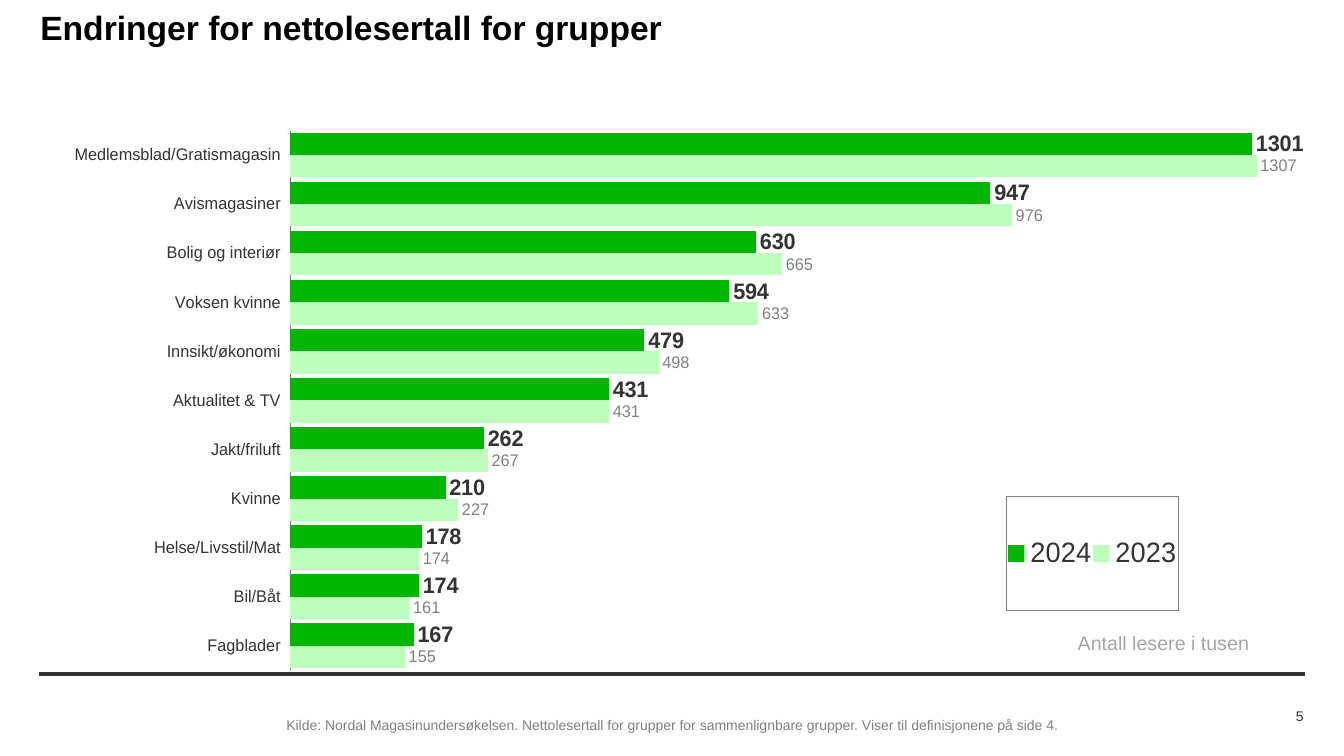
from lxml import etree
from pptx import Presentation
from pptx.chart.data import CategoryChartData
from pptx.dml.color import RGBColor
from pptx.enum.chart import XL_CHART_TYPE, XL_LABEL_POSITION, XL_LEGEND_POSITION, XL_TICK_LABEL_POSITION, XL_TICK_MARK
from pptx.enum.shapes import MSO_CONNECTOR
from pptx.enum.text import MSO_ANCHOR, PP_ALIGN
from pptx.oxml import parse_xml
from pptx.oxml.ns import nsdecls, qn
from pptx.util import Inches, Pt

BAR_CLUSTERED = XL_CHART_TYPE.BAR_CLUSTERED
OUTSIDE_END = XL_LABEL_POSITION.OUTSIDE_END
LEGEND_RIGHT = XL_LEGEND_POSITION.RIGHT
LABELS_LOW = XL_TICK_LABEL_POSITION.LOW
NO_TICK = XL_TICK_MARK.NONE
TOP, MIDDLE = MSO_ANCHOR.TOP, MSO_ANCHOR.MIDDLE
LEFT, RIGHT = PP_ALIGN.LEFT, PP_ALIGN.RIGHT
STRAIGHT = MSO_CONNECTOR.STRAIGHT

FONT = "Arial"
DARK, GREY = "333333", "808080"

# Group, readers in 2023, readers in 2024 (thousands)
READERS = [
    ("Fagblader", 155, 167),
    ("Bil/Båt", 161, 174),
    ("Helse/Livsstil/Mat", 174, 178),
    ("Kvinne", 227, 210),
    ("Jakt/friluft", 267, 262),
    ("Aktualitet & TV", 431, 431),
    ("Innsikt/økonomi", 498, 479),
    ("Voksen kvinne", 633, 594),
    ("Bolig og interiør", 665, 630),
    ("Avismagasiner", 976, 947),
    ("Medlemsblad/Gratismagasin", 1307, 1301),
]
YEARS = {
    "2023": {"fill": "BDFFBD", "label": {"size": 12, "color": GREY}},
    "2024": {"fill": "00B600", "label": {"size": 16, "bold": True}},
}


def rgb(color):
    return RGBColor.from_string(color)


def set_font(font, size, color=DARK, bold=False):
    for name, value in {"name": FONT, "size": Pt(size), "bold": bold}.items():
        setattr(font, name, value)
    font.color.rgb = rgb(color)


def fill_text(frame, text, size, color, bold=False, align=LEFT, anchor=TOP,
              margin=(0, 0), wrap=True):
    """Write one formatted paragraph; margin is (sides, top and bottom)."""
    side, end = (Inches(length) for length in margin)
    frame_format = {
        "word_wrap": wrap, "vertical_anchor": anchor,
        "margin_left": side, "margin_right": side,
        "margin_top": end, "margin_bottom": end,
    }
    for name, value in frame_format.items():
        setattr(frame, name, value)
    paragraph = frame.paragraphs[0]
    paragraph.alignment = align
    run = paragraph.add_run()
    run.text = text
    set_font(run.font, size, color, bold)


def add_title(slide, text):
    title = slide.shapes.title
    box = {"left": 0.4, "top": 0.07, "width": 12.54, "height": 0.44}
    for name, value in box.items():
        setattr(title, name, Inches(value))
    fill_text(title.text_frame, text, 24, "000000", bold=True)


def add_text(slide, box, text, size, color, **text_format):
    text_box = slide.shapes.add_textbox(*map(Inches, box))
    fill_text(text_box.text_frame, text, size, color, **text_format)


def add_rule(slide):
    y = Inches(6.69)
    rule = slide.shapes.add_connector(STRAIGHT, Inches(0.39), y, Inches(12.94), y)
    rule.line.color.rgb = rgb(DARK)
    rule.line.width = Pt(3)
    etree.SubElement(rule._element.spPr, qn("a:effectLst"))


def manual_layout(x, y, width, height, inner=False):
    """Layout element in fractions of the chart area."""
    target = '<c:layoutTarget val="inner"/>' if inner else ""
    return parse_xml(
        f'<c:layout {nsdecls("c")}><c:manualLayout>{target}'
        '<c:xMode val="edge"/><c:yMode val="edge"/>'
        f'<c:x val="{x}"/><c:y val="{y}"/><c:w val="{width}"/><c:h val="{height}"/>'
        '</c:manualLayout></c:layout>')


def replace_layout(parent, layout, index):
    for old in parent.findall(qn("c:layout")):
        parent.remove(old)
    parent.insert(index, layout)


def format_axes(chart):
    groups, values = chart.category_axis, chart.value_axis
    for name in ("major_tick_mark", "minor_tick_mark"):
        setattr(groups, name, NO_TICK)
    groups.tick_label_position = LABELS_LOW
    groups.format.line.color.rgb = rgb(GREY)
    set_font(groups.tick_labels.font, 12)
    values.has_major_gridlines = False
    values.minimum_scale = 0
    values.major_unit = 1
    values.visible = False


def format_series(series):
    style = YEARS[series.name]
    series.format.fill.solid()
    series.format.fill.fore_color.rgb = rgb(style["fill"])
    labels = series.data_labels
    label_format = {
        "show_value": True, "position": OUTSIDE_END,
        "number_format": "0", "number_format_is_linked": False,
    }
    for name, value in label_format.items():
        setattr(labels, name, value)
    set_font(labels.font, **style["label"])


def format_legend(chart):
    chart.has_legend = True
    legend = chart.legend
    legend.position = LEGEND_RIGHT
    legend.include_in_layout = True
    set_font(legend.font, 20)
    element = legend._element
    replace_layout(element, manual_layout(0.79, 0.67, 0.14, 0.21), 1)
    element.find(qn("c:overlay")).addnext(parse_xml(
        f'<c:spPr {nsdecls("c", "a")}><a:ln w="9525"><a:solidFill>'
        f'<a:srgbClr val="{GREY}"/></a:solidFill></a:ln></c:spPr>'))


def add_reader_chart(slide):
    groups, *year_values = zip(*READERS)
    data = CategoryChartData(number_format="0")
    data.categories = groups
    for year, values in zip(YEARS, year_values):
        data.add_series(year, values)
    box = map(Inches, (0.39, 1.29, 12.54, 5.42))
    chart = slide.shapes.add_chart(BAR_CLUSTERED, *box, data).chart
    chart.has_title = False
    set_font(chart.font, 14)
    plot = chart.plots[0]
    plot.gap_width = 20
    plot.overlap = 0
    plot.vary_by_categories = False
    for series in plot.series:
        format_series(series)
    format_axes(chart)
    format_legend(chart)
    plot_area = chart._chartSpace.chart.plotArea
    replace_layout(plot_area, manual_layout(0.205, 0, 0.794, 0.989, inner=True), 0)


def main():
    presentation = Presentation()
    presentation.slide_width = Inches(13.33)
    presentation.slide_height = Inches(7.5)
    slide = presentation.slides.add_slide(presentation.slide_layouts[5])

    add_rule(slide)
    add_title(slide, "Endringer for nettolesertall for grupper")
    add_text(slide, (10.59, 6.21, 1.91, 0.34), "Antall lesere i tusen", 14, "A6A6A6",
             margin=(0.1, 0.05), wrap=False)
    add_text(slide, (2.84, 6.99, 8.13, 0.41),
             "Kilde: Nordal Magasinundersøkelsen. Nettolesertall for grupper for "
             "sammenlignbare grupper. Viser til definisjonene på side 4.",
             10, GREY, anchor=MIDDLE)
    add_reader_chart(slide)
    add_text(slide, (11.87, 6.99, 1.06, 0.22), "5", 10, DARK, align=RIGHT, anchor=MIDDLE)

    presentation.save("out.pptx")


if __name__ == "__main__":
    main()
